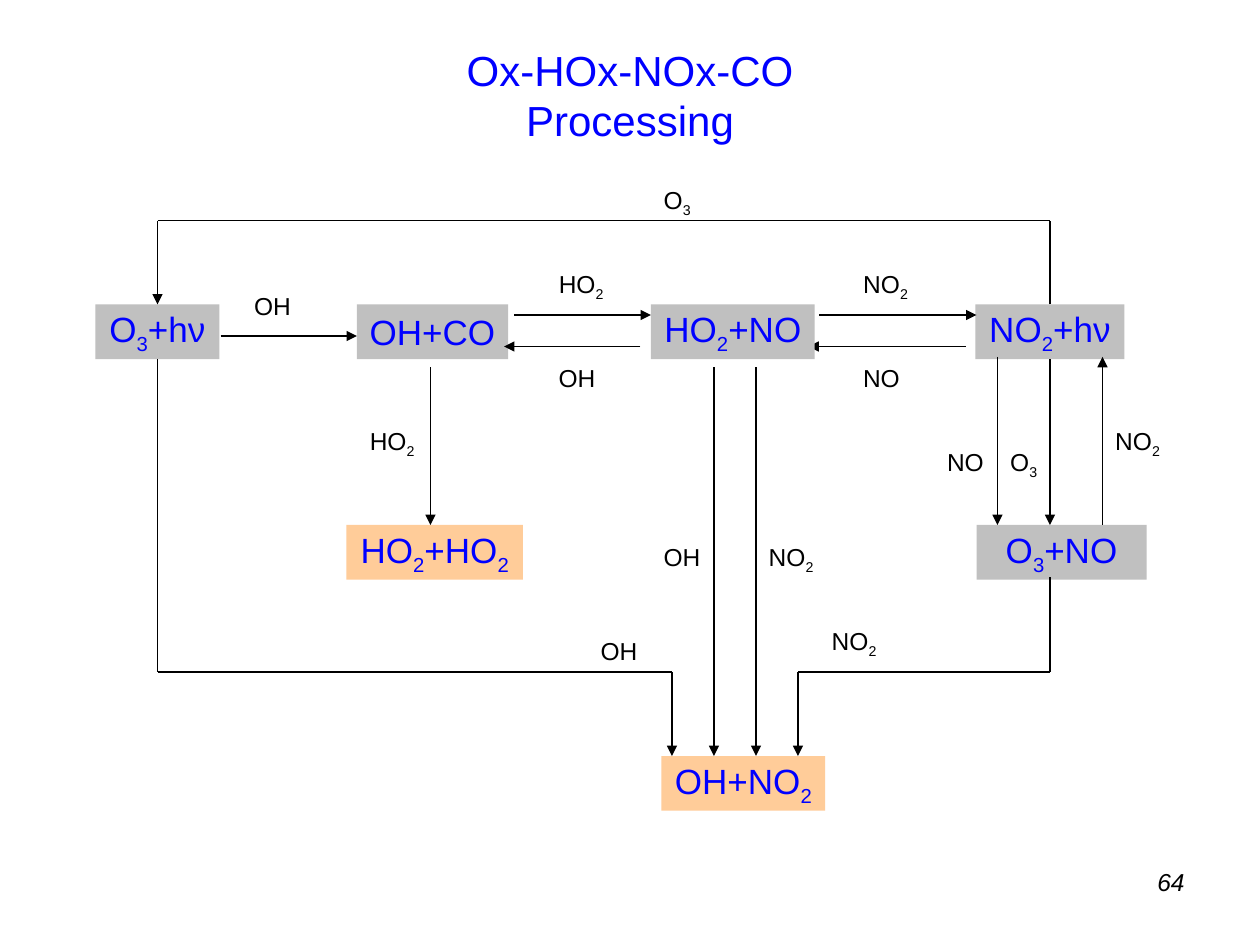
from itertools import groupby

from lxml import etree
from pptx import Presentation
from pptx.dml import color
from pptx.enum import shapes, text
from pptx.oxml import ns
from pptx.util import Emu, Pt

SCALE = 7620
BLUE, BLACK, GRAY, PEACH = "0000FF", "000000", "C0C0C0", "FFCC99"


def px(*vals):
    return [Emu(val * SCALE) for val in vals]


def rgb(code):
    return color.RGBColor.from_string(code)


class Chart:
    face = "Arial"
    thin = 0.75

    def __init__(self, slide):
        self.slide = slide

    def letter(self, shape, words, size, ink, sub=True):
        frame = shape.text_frame
        frame.word_wrap = False
        frame.auto_size = text.MSO_AUTO_SIZE.NONE
        para = frame.paragraphs[0]
        para.alignment = text.PP_ALIGN.CENTER
        font = para.font
        font.name, font.size = self.face, Pt(size)
        font.color.rgb = rgb(ink)
        for low, part in groupby(words, str.isdigit):
            run = para.add_run()
            run.text = "".join(part)
            if low and sub:
                run._r.get_or_add_rPr().set("baseline", "-25000")
        return para

    def title(self, words, *area):
        shape = self.slide.shapes.title
        shape.left, shape.top, shape.width, shape.height = px(*area)
        shape.text_frame.vertical_anchor = text.MSO_ANCHOR.MIDDLE
        self.letter(shape, words, 24, BLUE)

    def box(self, words, left, top, width, fill):
        kind = shapes.MSO_SHAPE.RECTANGLE
        shape = self.slide.shapes.add_shape(kind, *px(left, top, width, 52))
        shape.shadow.inherit = False
        shape.fill.solid()
        shape.fill.fore_color.rgb = rgb(fill)
        shape.line.fill.background()
        self.letter(shape, words, 20, BLUE)
        return shape

    def label(self, words, left, top):
        width = {"O3": 50, "OH": 59, "NO": 59}.get(words, 67)
        shape = self.slide.shapes.add_textbox(*px(left, top, width, 40))
        self.letter(shape, words, 14, BLACK)

    def number(self, words, *area):
        shape = self.slide.shapes.add_textbox(*px(*area))
        para = self.letter(shape, words, 14, BLACK, sub=False)
        shape.text_frame.word_wrap = True
        para.alignment = text.PP_ALIGN.RIGHT
        para.font.italic = True

    def line(self, *ends, head=True):
        kind = shapes.MSO_CONNECTOR.STRAIGHT
        link = self.slide.shapes.add_connector(kind, *px(*ends))
        link.line.width = Pt(self.thin)
        link.line.color.rgb = rgb(BLACK)
        if head:
            tail = etree.SubElement(link.line._get_or_add_ln(), ns.qn("a:tailEnd"))
            tail.set("type", "triangle")
        etree.SubElement(link._element.spPr, ns.qn("a:effectLst"))
        return link

    def route(self, *points):
        last = len(points) - 2
        return [
            self.line(*start, *end, head=i == last)
            for i, (start, end) in enumerate(zip(points, points[1:]))
        ]


def main():
    deck = Presentation()
    deck.slide_width, deck.slide_height = px(1200, 900)
    chart = Chart(deck.slides.add_slide(deck.slide_layouts[5]))

    chart.title("Ox-HOx-NOx-CO Processing", 328, 60, 544, 60)
    chart.number("64", 860, 820, 280, 62)
    chart.line(920, 330, 770, 330)

    ozone = chart.box("O3+hν", 91, 290, 118, GRAY)
    chart.box("OH+CO", 340, 290, 144, GRAY)
    chart.box("HO2+NO", 620, 290, 156, GRAY)
    light = chart.box("NO2+hν", 929, 290, 142, GRAY)
    chart.box("O3+NO", 930, 500, 162, GRAY)
    chart.box("HO2+HO2", 330, 500, 168, PEACH)
    chart.box("OH+NO2", 630, 720, 156, PEACH)

    for left, right, y in ((210, 340, 320), (490, 620, 300), (780, 930, 300), (610, 480, 330)):
        chart.line(left, y, right, y)
    for x, top, end in (
        (410, 350, 500), (680, 350, 720), (720, 350, 720),
        (950, 340, 500), (1050, 500, 340),
    ):
        chart.line(x, top, x, end)
    chart.line(1000, 342, 1000, 500).begin_connect(light, 2)

    loop = chart.route((1000, 290), (1000, 210), (150, 210), (150, 290))
    loop[0].begin_connect(light, 0)
    loop[-1].end_connect(ozone, 0)
    drop = chart.route((150, 342), (150, 640), (640, 640), (640, 720))
    drop[0].begin_connect(ozone, 2)
    chart.route((1000, 550), (1000, 640), (760, 640), (760, 720))

    for words, left, top in (
        ("O3", 620, 170), ("OH", 230, 271), ("HO2", 520, 250),
        ("NO2", 810, 250), ("OH", 520, 340), ("NO", 810, 340),
        ("HO2", 340, 400), ("NO", 890, 420), ("O3", 950, 420),
        ("NO2", 1050, 400), ("OH", 620, 510), ("NO2", 720, 510),
        ("OH", 560, 600), ("NO2", 780, 590),
    ):
        chart.label(words, left, top)

    deck.save("out.pptx")


if __name__ == "__main__":
    main()
